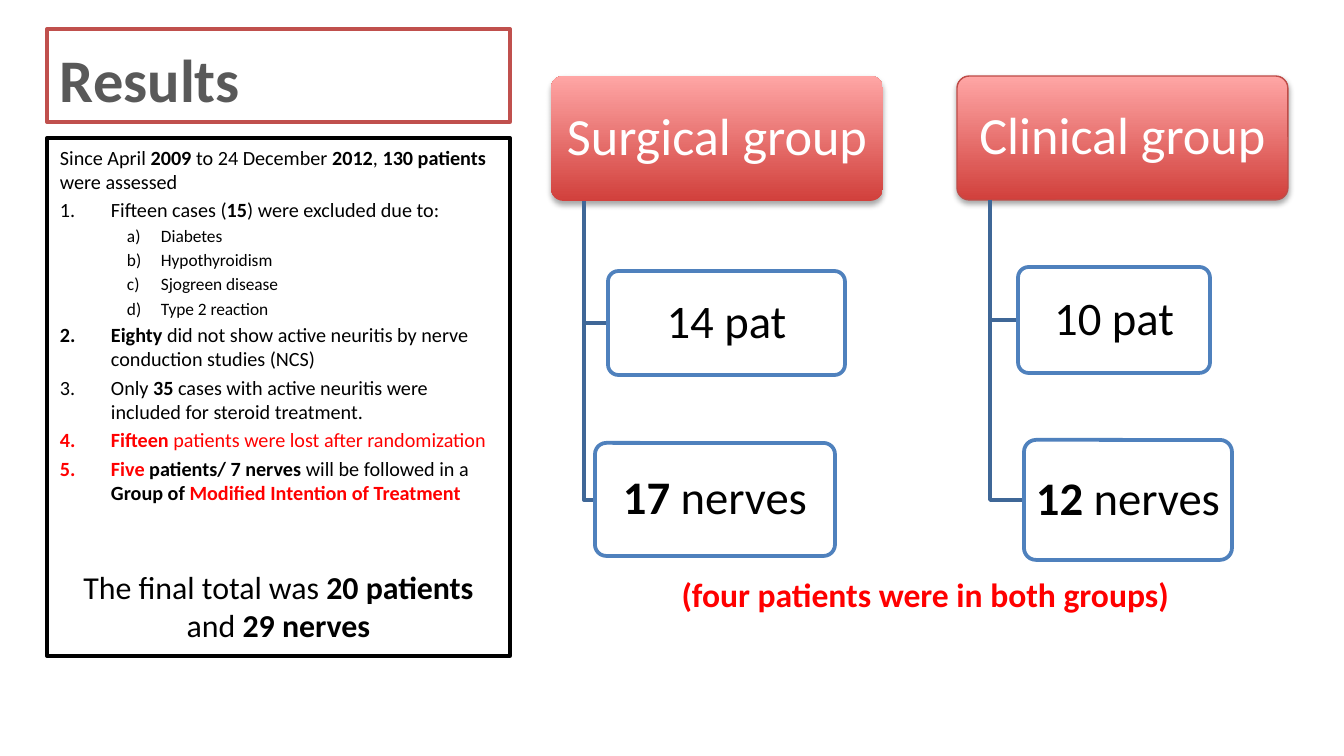
from lxml import etree
from pptx import Presentation
from pptx.dml.color import RGBColor
from pptx.enum.shapes import MSO_SHAPE
from pptx.enum.text import MSO_ANCHOR, PP_ALIGN
from pptx.oxml.ns import qn
from pptx.util import Pt

RECT, ROUNDED = MSO_SHAPE.RECTANGLE, MSO_SHAPE.ROUNDED_RECTANGLE
TOP, MIDDLE, BOTTOM = MSO_ANCHOR.TOP, MSO_ANCHOR.MIDDLE, MSO_ANCHOR.BOTTOM
LEFT, CENTER = PP_ALIGN.LEFT, PP_ALIGN.CENTER

SLIDE_W, SLIDE_H = 1344, 756
PX = 9144000 / SLIDE_W
FONT = "Calibri"
COLORS = {
    "white": "FFFFFF", "black": "000000", "gray": "595959", "red": "FF0000",
    "title_line": "C0504D", "header_line": "BF4C48",
    "header_dark": "D1403C", "header_light": "FFA6A5",
    "branch": "3F6797", "box_line": "4F81BD",
}

# A run is (text, marks): "b" is bold, "r" is red.
INTRO = [("Since April ", ""), ("2009 ", "b"), ("to 24 December ", ""), ("2012", "b"),
         (", ", ""), ("130 patients", "b"), (" were assessed", "")]
STEPS = [
    ([("Fifteen cases (", ""), ("15", "b"), (") were excluded due to:", "")],
     ["Diabetes", "Hypothyroidism", "Sjogreen disease", "Type 2 reaction"]),
    ([("Eighty", "b"),
      (" did not show active neuritis by nerve conduction studies (NCS)", "")], []),
    ([("Only ", ""), ("35 ", "b"),
      ("cases with active neuritis were included for steroid treatment.", "")], []),
    ([("Fifteen", "br"), (" patients were lost after randomization", "r")], []),
    ([("Five ", "br"), ("patients/ 7 nerves ", "b"), ("will be followed in a", ""),
      (" Group of ", "b"), ("Modified Intention of Treatment", "br")], []),
]
TOTAL = [("The final total was ", ""), ("20 patients ", "b"), ("and ", ""),
         ("29 nerves", "b")]
GROUPS = [
    {"name": "Surgical group", "at": (551, 76, 332, 125), "line": None,
     "counts": [([("14 pat", "")], (608, 271, 237, 104)),
                ([("17 ", "b"), ("nerves", "")], (595, 443, 240, 113))]},
    {"name": "Clinical group", "at": (957, 76, 331, 124), "line": "header_line",
     "counts": [([("10 pat", "")], (1018, 267, 192, 106)),
                ([("12 ", "b"), ("nerves", "")], (1024, 440, 208, 120))]},
]
OVERLAP = "(four patients were in both groups)"
TRUNK_INDENT = 33

presentation = Presentation()
presentation.slide_width, presentation.slide_height = round(SLIDE_W * PX), round(SLIDE_H * PX)
slide = presentation.slides.add_slide(presentation.slide_layouts[6])


def px(*lengths):
    return [round(length * PX) for length in lengths]


def rgb(name):
    return RGBColor.from_string(COLORS[name])


def set_line(shape, color, width=2):
    if color is None:
        shape.line.fill.background()
    else:
        shape.line.color.rgb = rgb(color)
        shape.line.width = Pt(width)


def add_box(kind, at, line, width=2):
    box = slide.shapes.add_shape(kind, *px(*at))
    box.shadow.inherit = False
    box.fill.solid()
    box.fill.fore_color.rgb = rgb("white")
    set_line(box, line, width)
    if kind == ROUNDED:
        box.adjustments[0] = 0.1
    return box


def prepare_frame(shape, anchor, margin_x=13, margin_y=7):
    frame = shape.text_frame
    frame.word_wrap = True
    frame.vertical_anchor = anchor
    frame.margin_left, frame.margin_right = px(margin_x, margin_x)
    frame.margin_top, frame.margin_bottom = px(margin_y, margin_y)
    return frame


def write(frame, runs, size, color="black", align=LEFT, before=0, spacing=None,
          numbering=None, level=0, indent=0, hanging=0):
    """Add a paragraph, reusing the empty first one."""
    first = frame.paragraphs[0]
    paragraph = frame.add_paragraph() if first.runs else first
    if numbering:
        properties = paragraph._p.get_or_add_pPr()
        left, first_line = px(indent, -hanging)
        properties.set("marL", str(left))
        properties.set("indent", str(first_line))
        etree.SubElement(properties, qn("a:buAutoNum"), type=numbering)
    paragraph.level = level
    paragraph.alignment = align
    paragraph.space_before = Pt(before)
    if spacing:
        paragraph.line_spacing = spacing
    for text, marks in runs:
        run = paragraph.add_run()
        run.text = text
        run.font.name, run.font.size = FONT, Pt(size)
        run.font.bold = "b" in marks
        run.font.color.rgb = rgb("red" if "r" in marks else color)


def add_branch(x, top, box_at):
    """Draw the elbow from a header down to the left side of a count box."""
    left, box_top, _, height = box_at
    middle = box_top + height / 2
    builder = slide.shapes.build_freeform(x, top, scale=PX)
    builder.add_line_segments([(x, middle), (left, middle)], close=False)
    branch = builder.convert_to_shape()
    branch.shadow.inherit = False
    branch.fill.background()
    set_line(branch, "branch")


def style_header(header):
    header.fill.gradient()
    header.fill.gradient_angle = 90
    for stop, color in zip(header.fill.gradient_stops, ("header_dark", "header_light")):
        stop.color.rgb = rgb(color)
    effects = header._element.spPr.find(qn("a:effectLst"))
    shadow = etree.SubElement(effects, qn("a:outerShdw"), blurRad=str(Pt(3.1)),
                              dist=str(Pt(1.8)), dir="5400000", rotWithShape="0")
    shade = etree.SubElement(shadow, qn("a:srgbClr"), val=COLORS["black"])
    etree.SubElement(shade, qn("a:alpha"), val="35000")


title = prepare_frame(add_box(RECT, (47, 29, 463, 93), "title_line"), BOTTOM)
write(title, [("Results", "b")], 32.4, color="gray")

for group in GROUPS:
    x, y, _, height = group["at"]
    header = add_box(ROUNDED, group["at"], group["line"], 0.75)
    style_header(header)
    write(prepare_frame(header, MIDDLE, 5, 5), [(group["name"], "")], 28,
          color="white", align=CENTER, spacing=0.9)
    for runs, at in group["counts"]:
        add_branch(x + TRUNK_INDENT, y + height, at)
        count = prepare_frame(add_box(ROUNDED, at, "box_line"), MIDDLE, 5, 5)
        write(count, runs, 25, align=CENTER, spacing=0.9)

body = prepare_frame(add_box(RECT, (47, 138, 463, 518), "black"), TOP)
write(body, INTRO, 10.8)
for step, causes in STEPS:
    write(body, step, 10.8, before=2.2, numbering="arabicPeriod", indent=51, hanging=51)
    for cause in causes:
        write(body, [(cause, "")], 9.3, before=1.8, numbering="alphaLcParenR",
              level=1, indent=101, hanging=34)
write(body, TOTAL, 17.1, align=CENTER, before=34)

overlap = slide.shapes.add_textbox(*px(595, 567, 661, 54))
write(prepare_frame(overlap, TOP), [(OVERLAP, "b")], 18, color="red", align=CENTER)

presentation.save("out.pptx")
